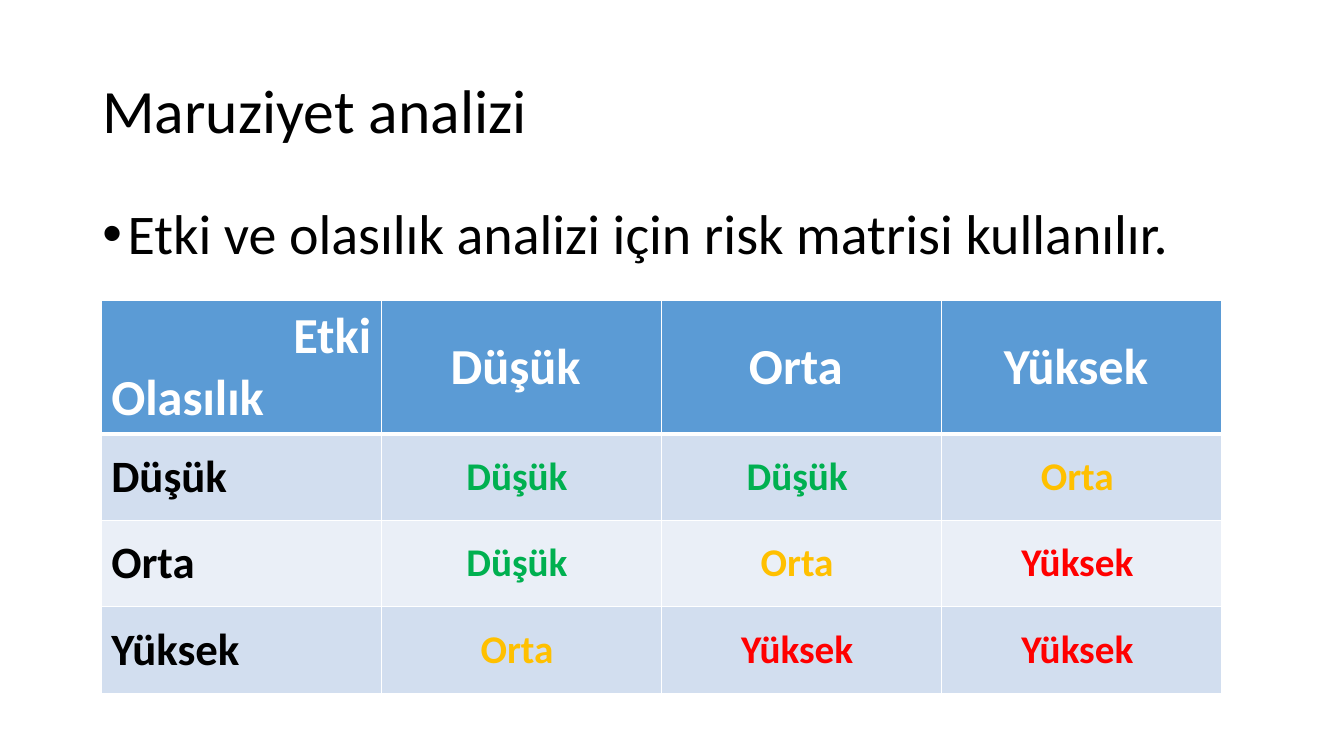
"""Builds the exposure analysis slide with its risk matrix."""
from dataclasses import dataclass

from lxml import etree
from pptx import Presentation
from pptx.dml.color import RGBColor
from pptx.enum.text import MSO_ANCHOR, PP_ALIGN
from pptx.oxml.ns import qn
from pptx.util import Cm, Pt

LEFT, CENTER, RIGHT = PP_ALIGN.LEFT, PP_ALIGN.CENTER, PP_ALIGN.RIGHT
TOP, MIDDLE = MSO_ANCHOR.TOP, MSO_ANCHOR.MIDDLE

TITLE = "Maruziyet analizi"
STATEMENT = "Etki ve olasılık analizi için risk matrisi kullanılır."
IMPACT_AXIS, LIKELIHOOD_AXIS = "Etki", "Olasılık"
LEVELS = ("Düşük", "Orta", "Yüksek")
RISKS = (
    ("Düşük", "Düşük", "Orta"),
    ("Düşük", "Orta", "Yüksek"),
    ("Orta", "Yüksek", "Yüksek"),
)
RISK_COLORS = {"Düşük": "00B050", "Orta": "FFC000", "Yüksek": "FF0000"}


@dataclass(frozen=True)
class Theme:
    font: str = "Calibri"
    ink: str = "000000"
    paper: str = "FFFFFF"
    header: str = "5B9BD5"
    bands: tuple = ("D2DEEF", "EAEFF7")
    title_size: int = 44
    statement_size: int = 40
    header_size: int = 36
    level_size: int = 32
    risk_size: int = 28


THEME = Theme()
SLIDE_WIDTH, SLIDE_HEIGHT = Cm(33.87), Cm(19.05)
TEXT_LEFT, TEXT_WIDTH = Cm(2.33), Cm(29.21)
TITLE_TOP, TITLE_HEIGHT = Cm(1.01), Cm(3.68)
STATEMENT_TOP, STATEMENT_HEIGHT = Cm(5.07), Cm(4.2)
BULLET_INDENT = Cm(0.64)
MATRIX_LEFT, MATRIX_TOP = Cm(2.55), Cm(7.58)
COLUMN_WIDTH, HEADER_HEIGHT, ROW_HEIGHT = Cm(7.06), Cm(3.35), Cm(2.18)


def write(paragraph, text, size, color, bold=False, align=LEFT):
    paragraph.alignment = align
    run = paragraph.add_run()
    run.text = text
    run.font.name = THEME.font
    run.font.size = Pt(size)
    run.font.bold = bold
    run.font.color.rgb = RGBColor.from_string(color)


def add_text(slide, top, height, text, size, anchor):
    box = slide.shapes.add_textbox(TEXT_LEFT, top, TEXT_WIDTH, height)
    frame = box.text_frame
    frame.word_wrap = True
    frame.vertical_anchor = anchor
    paragraph = frame.paragraphs[0]
    paragraph.line_spacing = 0.9
    write(paragraph, text, size, THEME.ink)
    return paragraph


def add_bullet(paragraph):
    paragraph.space_before = Pt(10)
    properties = paragraph._p.get_or_add_pPr()
    properties.set("marL", str(BULLET_INDENT))
    properties.set("indent", str(-BULLET_INDENT))
    etree.SubElement(properties, qn("a:buFont")).set("typeface", "Arial")
    etree.SubElement(properties, qn("a:buChar")).set("char", "•")


def style_cell(cell, fill, bottom_width=1):
    cell.vertical_anchor = MIDDLE
    properties = cell._tc.get_or_add_tcPr()
    for side, width in (("L", 1), ("R", 1), ("T", 1), ("B", bottom_width)):
        line = etree.SubElement(properties, qn(f"a:ln{side}"), w=str(Pt(width)))
        solid = etree.SubElement(line, qn("a:solidFill"))
        etree.SubElement(solid, qn("a:srgbClr"), val=THEME.paper)
    cell.fill.solid()
    cell.fill.fore_color.rgb = RGBColor.from_string(fill)


def add_matrix(slide):
    count = len(LEVELS) + 1
    matrix = slide.shapes.add_table(
        count, count, MATRIX_LEFT, MATRIX_TOP,
        COLUMN_WIDTH * count, HEADER_HEIGHT + ROW_HEIGHT * len(LEVELS),
    ).table
    matrix.horz_banding = False
    for column in matrix.columns:
        column.width = COLUMN_WIDTH
    for index, row in enumerate(matrix.rows):
        row.height = ROW_HEIGHT if index else HEADER_HEIGHT
        for cell in row.cells:
            if index:
                style_cell(cell, THEME.bands[(index - 1) % 2])
            else:
                style_cell(cell, THEME.header, 3)

    axes = matrix.cell(0, 0).text_frame
    write(axes.paragraphs[0], IMPACT_AXIS, THEME.header_size, THEME.paper, True, RIGHT)
    write(axes.add_paragraph(), LIKELIHOOD_AXIS, THEME.header_size, THEME.paper, True)
    for index, (level, risks) in enumerate(zip(LEVELS, RISKS), 1):
        impact = matrix.cell(0, index).text_frame.paragraphs[0]
        write(impact, level + " ", THEME.header_size, THEME.paper, True, CENTER)
        likelihood = matrix.cell(index, 0).text_frame.paragraphs[0]
        write(likelihood, level, THEME.level_size, THEME.ink, True)
        for column, risk in enumerate(risks, 1):
            paragraph = matrix.cell(index, column).text_frame.paragraphs[0]
            write(paragraph, risk + " ", THEME.risk_size, RISK_COLORS[risk], True, CENTER)


def main():
    presentation = Presentation()
    presentation.slide_width, presentation.slide_height = SLIDE_WIDTH, SLIDE_HEIGHT
    slide = presentation.slides.add_slide(presentation.slide_layouts[6])
    add_text(slide, TITLE_TOP, TITLE_HEIGHT, TITLE, THEME.title_size, MIDDLE)
    add_bullet(add_text(slide, STATEMENT_TOP, STATEMENT_HEIGHT, STATEMENT,
                        THEME.statement_size, TOP))
    add_matrix(slide)
    presentation.save("out.pptx")


if __name__ == "__main__":
    main()
